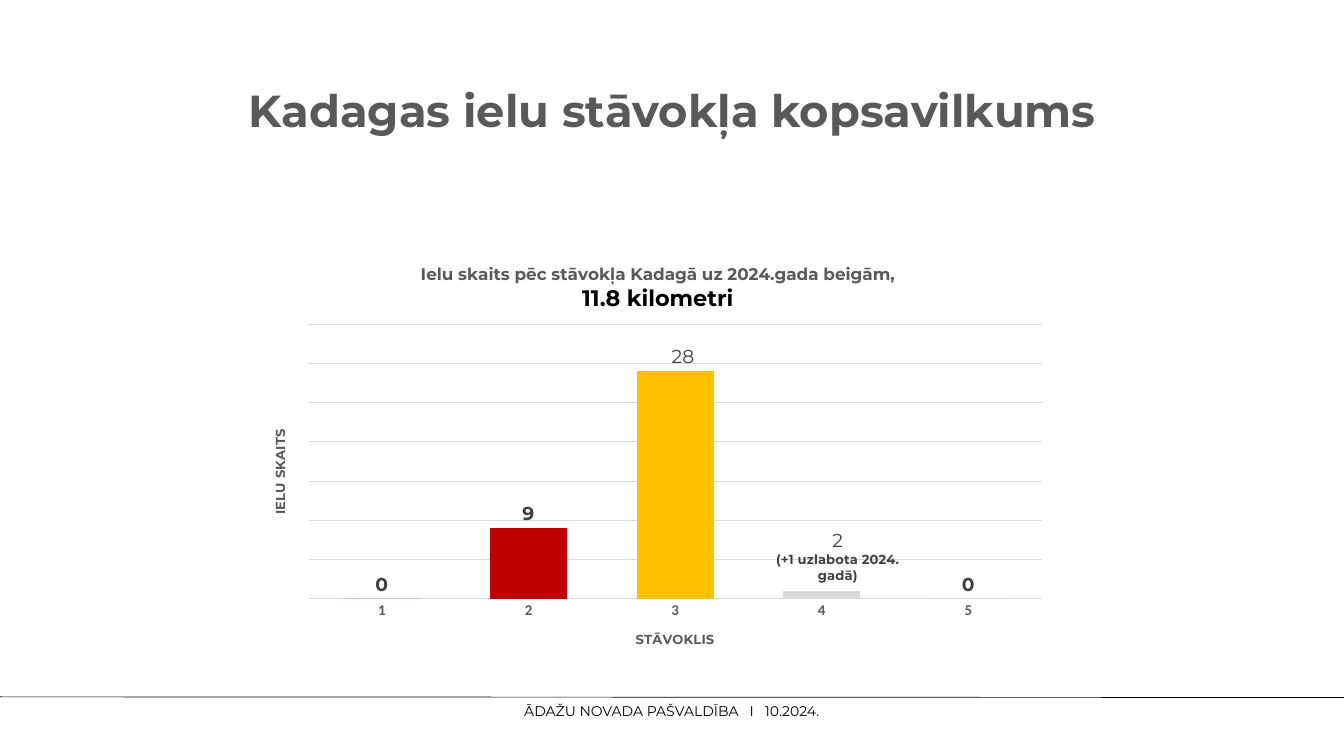
from pptx import Presentation, util as u
from pptx.chart.data import CategoryChartData
from pptx.dml.color import RGBColor
from pptx.enum import chart as ch, shapes, text
from pptx.oxml import parse_xml
from pptx.oxml.ns import nsdecls, qn

FONT = "Montserrat"
GREY = "595959"


def paint(hue):
    return RGBColor.from_string(hue)


def style(font, size, hue, bold=False, name=FONT):
    font.size, font.bold, font.name = u.Pt(size), bold, name
    font.color.rgb = paint(hue)


def write(frame, lines):
    """Fill a text frame with one centred paragraph per (words, size, hue, bold)."""
    for i, (words, *look) in enumerate(lines):
        par = frame.paragraphs[0] if i == 0 else frame.add_paragraph()
        par.alignment = text.PP_ALIGN.CENTER
        run = par.add_run()
        run.text = words
        style(run.font, *look)


def layout(**parts):
    """Manual chart layout; the parts are fractions of the chart."""
    inner = "".join(f'<c:{key} val="{val}"/>' for key, val in parts.items())
    return parse_xml(f'<c:layout {nsdecls("c")}><c:manualLayout>{inner}'
                     '</c:manualLayout></c:layout>')


def add_title(slide, left, top, width, height):
    title = slide.shapes.title
    title.left, title.top, title.width, title.height = left, top, width, height
    frame = title.text_frame
    frame.word_wrap = True
    frame.vertical_anchor = text.MSO_ANCHOR.MIDDLE
    write(frame, [("Kadagas ielu stāvokļa kopsavilkums", 48, GREY, True)])
    frame.paragraphs[0].line_spacing = 0.9


def add_axes(chart):
    cat, val = chart.category_axis, chart.value_axis
    for axis, name in ((cat, "STĀVOKLIS"), (val, "IELU SKAITS")):
        write(axis.axis_title.text_frame, [(name, 14, GREY, True)])
    cat.major_tick_mark = ch.XL_TICK_MARK.NONE
    cat.format.line.fill.background()
    style(cat.tick_labels.font, 16, GREY, True, "Calibri")
    val.visible = False
    val.minimum_scale, val.maximum_scale, val.major_unit = 0, 35, 5
    grid = val.major_gridlines.format.line
    grid.color.rgb, grid.width = paint("D9D9D9"), u.Pt(0.75)


def add_label(point, lines, x, y):
    """Give a bar its own label text, moved by x and y."""
    label = point.data_label
    write(label.text_frame, lines)
    label.position = ch.XL_LABEL_POSITION.OUTSIDE_END
    node = label.text_frame._txBody.getparent().getparent()
    node.find(qn("c:idx")).addnext(layout(x=x, y=y))


def add_bars(plot):
    plot.gap_width = 90
    plot.vary_by_categories = False
    bars = plot.series[0]
    bars.format.fill.solid()
    bars.format.fill.fore_color.rgb = paint("4472C4")
    for i, hue in enumerate(("FF0000", "C00000", "FFC000", "D9D9D9", "92D050")):
        fill = bars.points[i].format.fill
        fill.solid()
        fill.fore_color.rgb = paint(hue)
    labels = bars.data_labels
    labels.show_value = True
    labels.position = ch.XL_LABEL_POSITION.OUTSIDE_END
    style(labels.font, 20, "404040", True)
    add_label(bars.points[2], [("28", 20, "404040")], 0.01, 0)
    add_label(bars.points[3], [("2", 20, "404040"),
                               ("(+1 uzlabota 2024. gadā)", 14, "404040", True)],
              0.02, -0.01)


def add_chart(slide, *box):
    data = CategoryChartData()
    data.categories = ["1", "2", "3", "4", "5"]
    data.add_series("Series 1", (0, 9, 29, 1, 0))
    kind = ch.XL_CHART_TYPE.COLUMN_CLUSTERED
    chart = slide.shapes.add_chart(kind, *box, data).chart
    style(chart.font, 10, "000000", name="Calibri")
    chart.has_legend = False
    write(chart.chart_title.text_frame, [
        ("Ielu skaits pēc stāvokļa Kadagā uz 2024.gada beigām,", 18, GREY, True),
        ("11.8 kilometri", 24, "000000", True)])
    chart.chart_title.include_in_layout = False
    add_axes(chart)
    add_bars(chart.plots[0])
    area = chart._chartSpace.chart.plotArea
    for old in area.findall(qn("c:layout")):
        area.remove(old)
    area.insert(0, layout(layoutTarget="inner", xMode="edge", yMode="edge",
                          x=0.064, y=0.18, w=0.915, h=0.663))


def add_footer(slide, left, top, width, height):
    rule = slide.shapes.add_connector(shapes.MSO_CONNECTOR.STRAIGHT,
                                      left, top, left + width, top + u.Inches(0.01))
    rule.line.color.rgb, rule.line.width = paint("000000"), u.Pt(0.75)
    rule._element.spPr.append(parse_xml(f'<a:effectLst {nsdecls("a")}/>'))
    pad, gap = u.Inches(0.11), u.Inches(0.09)
    frame = slide.shapes.add_textbox(left + pad, top + gap, width - 2 * pad,
                                     height - gap).text_frame
    frame.word_wrap = True
    frame.margin_left = frame.margin_right = frame.margin_top = frame.margin_bottom = 0
    write(frame, [("ĀDAŽU NOVADA PAŠVALDĪBA   I   10.2024.", 15, "000000")])
    frame.paragraphs[0].line_spacing = u.Pt(18)


def main():
    deck = Presentation()
    deck.slide_width, deck.slide_height = u.Inches(20), u.Inches(11.25)
    slide = deck.slides.add_slide(deck.slide_layouts[5])
    add_title(slide, *map(u.Inches, (1.38, 0.6, 17.25, 2.17)))
    add_chart(slide, *map(u.Inches, (3.83, 3.71, 11.92, 6.17)))
    add_footer(slide, *map(u.Inches, (-0.01, 10.37, 20.02, 0.34)))
    deck.save("out.pptx")


if __name__ == "__main__":
    main()
